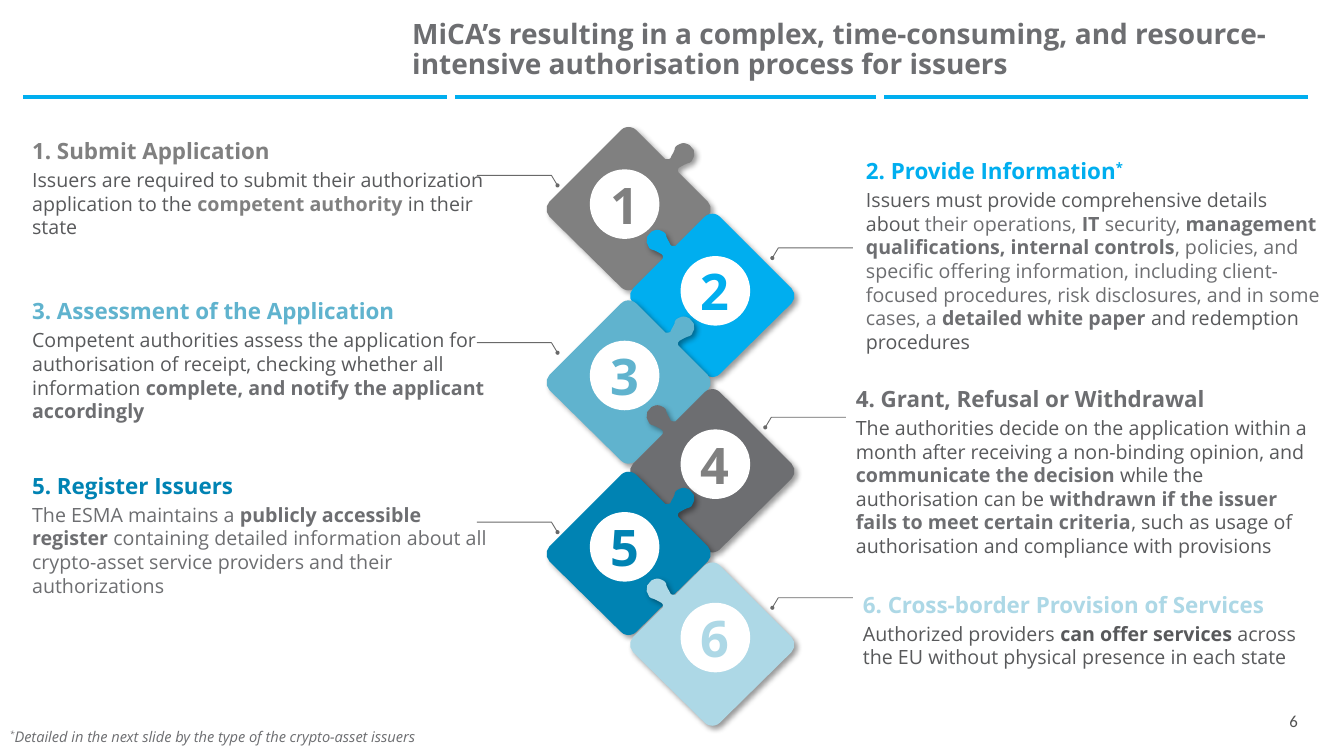
import dataclasses
import lxml.etree
import pptx
import pptx.dml.color
import pptx.enum.shapes
import pptx.enum.text
import pptx.oxml.ns
import pptx.util

Inches, Pt = pptx.util.Inches, pptx.util.Pt
Align, Anchor = pptx.enum.text.PP_ALIGN, pptx.enum.text.MSO_ANCHOR
qn = pptx.oxml.ns.qn


@dataclasses.dataclass(frozen=True)
class Theme:
    font: str = "Open Sans"
    plain: str = "Calibri"
    white: str = "FFFFFF"
    sky: str = "00AEEF"
    steel: str = "60B3CE"
    deep: str = "0083B3"
    pale: str = "ADD8E6"
    gray: str = "808080"
    slate: str = "6D6E71"
    ink: str = "58595B"
    rule: str = "696969"
    page: str = "525252"
    title: float = 20
    head: float = 16
    body: float = 14
    note: float = 10.5
    number: float = 12
    badge: float = 36


T = Theme()

# Right-hand puzzle piece, in inches from its corner: pairs are line ends,
# sets of six are Bezier curves. The left-hand piece is its mirror.
WIDE = 1.65
PIECE = [
    (0.83, 0), (0.8, 0, 0.77, 0.01, 0.75, 0.03), (0.46, 0.32),
    (0.46, 0.32, 0.45, 0.32, 0.44, 0.32), (0.43, 0.32, 0.42, 0.32, 0.41, 0.31),
    (0.4, 0.28, 0.38, 0.26, 0.37, 0.23), (0.37, 0.21, 0.36, 0.19, 0.34, 0.18),
    (0.32, 0.17, 0.3, 0.16, 0.28, 0.16), (0.26, 0.16, 0.24, 0.17, 0.22, 0.18),
    (0.16, 0.22, 0.16, 0.29, 0.2, 0.34), (0.21, 0.35, 0.23, 0.36, 0.24, 0.36),
    (0.27, 0.37, 0.3, 0.39, 0.32, 0.4), (0.34, 0.41, 0.34, 0.44, 0.33, 0.45),
    (0.04, 0.74), (0, 0.78, 0, 0.85, 0.04, 0.89), (0.75, 1.59),
    (0.77, 1.61, 0.8, 1.62, 0.83, 1.62), (0.85, 1.62, 0.88, 1.61, 0.9, 1.59),
    (1.61, 0.89), (1.65, 0.85, 1.65, 0.78, 1.61, 0.74), (0.9, 0.03),
    (0.88, 0.01, 0.85, 0, 0.83, 0),
]


def trace(parts, steps=3):
    """Turn lines and Bezier curves into a list of points."""
    points = [parts[0]]
    for part in parts[1:]:
        if len(part) == 2:
            points.append(part)
            continue
        nodes = [points[-1], part[:2], part[2:4], part[4:]]
        for step in range(1, steps + 1):
            t = step / steps
            blend = ((1 - t) ** 3, 3 * t * (1 - t) ** 2, 3 * t * t * (1 - t), t ** 3)
            points.append(tuple(sum(b * n[i] for b, n in zip(blend, nodes)) for i in (0, 1)))
    return points


def tint(color):
    return pptx.dml.color.RGBColor.from_string(color)


def add(parent, tag, **attrs):
    return lxml.etree.SubElement(parent, qn(tag), attrs)


class Deck:
    def __init__(self):
        self.show = pptx.Presentation()
        self.show.slide_width, self.show.slide_height = Inches(13.33), Inches(7.5)
        self.slide = self.show.slides.add_slide(self.show.slide_layouts[6])
        self.shapes = self.slide.shapes

    def paint(self, shape, color):
        shape.shadow.inherit = False
        shape.fill.solid()
        shape.fill.fore_color.rgb = tint(color)
        shape.line.fill.background()

    def style(self, run, size, color, bold=False, font=T.font, italic=False, base=False):
        run.font.size, run.font.name = Pt(size), font
        run.font.bold, run.font.italic = bold, italic
        run.font.color.rgb = tint(color)
        if base:
            run._r.get_or_add_rPr().set("baseline", "30000")

    def text(self, at, lines, anchor=Anchor.TOP, inset=0.1, after=(0,), align=Align.LEFT, space=None):
        """Add a box; each line is a list of (text, style) pairs."""
        frame = self.shapes.add_textbox(*map(Inches, at)).text_frame
        frame.word_wrap, frame.vertical_anchor = True, anchor
        frame.margin_left = frame.margin_right = Inches(0.1)
        frame.margin_top = frame.margin_bottom = Inches(inset)
        for i, (line, gap) in enumerate(zip(lines, after)):
            para = frame.add_paragraph() if i else frame.paragraphs[0]
            para.alignment, para.space_after, para.line_spacing = align, Pt(gap), space
            for words, look in line:
                run = para.add_run()
                run.text = words
                self.style(run, **look)

    def outline(self, points, closed):
        first, *rest = [(Inches(x), Inches(y)) for x, y in points]
        build = self.shapes.build_freeform(*first)
        build.add_line_segments(rest, close=closed)
        return build.convert_to_shape()

    def piece(self, left, top, color, flip):
        points = [(left + (WIDE - x if flip else x), top + y) for x, y in trace(PIECE)]
        shape = self.outline(points, True)
        self.paint(shape, color)
        glow = add(shape._element.spPr.find(qn("a:effectLst")), "a:outerShdw",
                   blurRad=str(Pt(4)), dist=str(Pt(3)), dir="2700000", algn="tl", rotWithShape="0")
        add(add(glow, "a:srgbClr", val="000000"), "a:alpha", val="40000")

    def oval(self, left, top, size, color):
        shape = self.shapes.add_shape(pptx.enum.shapes.MSO_SHAPE.OVAL,
                                      *map(Inches, (left, top, size, size)))
        self.paint(shape, color)
        return shape

    def badge(self, left, top, label, color):
        frame = self.oval(left, top, 0.69, T.white).text_frame
        frame.text, frame.word_wrap = label, False
        frame.margin_left = frame.margin_right = frame.margin_top = frame.margin_bottom = 0
        frame.vertical_anchor = Anchor.MIDDLE
        frame.paragraphs[0].alignment = Align.CENTER
        self.style(frame.paragraphs[0].runs[0], T.badge, color, True)

    def leader(self, x, y, side):
        """Draw a bent line from a dot; side is -1 for left, 1 for right."""
        line = self.outline([(x, y), (x + side * 0.06, y - 0.1), (x + side * 0.8, y - 0.1)], False)
        line.shadow.inherit = False
        line.fill.background()
        line.line.color.rgb, line.line.width = tint(T.rule), Pt(0.61)
        self.oval(x - 0.02, y - 0.02, 0.04, T.rule)

    def bars(self, left, top, width, height, count):
        table = self.shapes.add_table(1, count, *map(Inches, (left, top, width, height))).table
        for i, cell in enumerate(table.rows[0].cells):
            table.columns[i].width = Inches(width / count)
            cell.margin_left = cell.margin_right = cell.margin_top = cell.margin_bottom = 0
            cell.fill.solid()
            cell.fill.fore_color.rgb = tint(T.sky)
            add(cell.text_frame.paragraphs[0]._p, "a:endParaRPr", sz="100")
            props = cell._tc.get_or_add_tcPr()
            edges = [tag for tag, shown in (("a:lnL", i > 0), ("a:lnR", i < count - 1)) if shown]
            for spot, tag in enumerate(edges):
                edge = add(props, tag, w=str(Pt(6)))
                add(add(edge, "a:solidFill"), "a:srgbClr", val=T.white)
                props.insert(spot, edge)


def look(size, color, bold=False, **more):
    return dict(size=size, color=color, bold=bold, **more)


INK, INK_BOLD = look(T.body, T.ink), look(T.body, T.ink, True)
SLATE, SLATE_BOLD = look(T.body, T.slate), look(T.body, T.slate, True)
GRAY_BOLD = look(T.body, T.gray, True)

# Heading, colour, numeral colour, piece top, leader tip, text box, body
STEPS = [
    ("Submit Application", T.gray, T.gray, 1.26, (5.53, 1.84), (0.22, 1.26, 4.72, 1.26), [
        ("Issuers are required to submit their authorization application to the ", INK),
        ("competent authority ", GRAY_BOLD), ("in their state", INK)]),
    ("Provide Information", T.sky, T.sky, 2.12, (7.66, 2.56), (8.49, 1.46, 4.72, 2.01), [
        ("Issuers must provide comprehensive details about ", INK), ("their operations, ", SLATE),
        ("IT", SLATE_BOLD), (" security, ", SLATE),
        ("management qualifications, internal controls", SLATE_BOLD),
        (", policies, and specific offering information, including client-focused procedures, "
         "risk disclosures, and in some cases, a ", SLATE),
        ("detailed white paper ", SLATE_BOLD), ("and redemption procedures", INK)]),
    ("Assessment of the Application", T.steel, T.steel, 2.98, (5.53, 3.5), (0.22, 2.85, 4.72, 1.4), [
        ("Competent authorities assess the application for authorisation of receipt, "
         "checking whether all information ", INK),
        ("complete, and notify the applicant accordingly", SLATE_BOLD)]),
    ("Grant, Refusal or Withdrawal", T.slate, T.gray, 3.86, (7.59, 4.24), (8.39, 3.72, 4.72, 2.01), [
        ("The authorities decide on the application within a month after receiving "
         "a non-binding opinion, and ", INK),
        ("communicate the decision ", SLATE_BOLD), ("while the authorisation can be ", INK),
        ("withdrawn if the issuer fails to meet certain criteria", SLATE_BOLD),
        (", such as usage of authorisation and compliance with provisions", INK)]),
    ("Register Issuers", T.deep, T.deep, 4.68, (5.53, 5.28), (0.22, 4.58, 4.72, 1.18), [
        ("The ESMA maintains a ", SLATE), ("publicly accessible register ", SLATE_BOLD),
        ("containing detailed information about all crypto-asset service providers "
         "and their authorizations", SLATE)]),
    ("Cross-border Provision of Services", T.pale, T.pale, 5.58, (7.66, 6.03), (8.46, 5.76, 4.72, 1.12), [
        ("Authorized providers ", INK), ("can offer services ", INK_BOLD),
        ("across the EU without physical presence in each state", INK)]),
]


def main():
    deck = Deck()
    deck.bars(0.22, 0.94, 12.76, 0.05, 3)
    deck.text((3.99, 0, 8.98, 1), [[(
        "MiCA’s resulting in a complex, time-consuming, and resource-intensive "
        "authorisation process for issuers", look(T.title, T.slate, True))]],
        anchor=Anchor.MIDDLE, inset=0.05, space=0.9)
    deck.text((10.33, 6.95, 2.64, 0.4), [[("6", look(T.number, T.page, font=T.plain))]],
              anchor=Anchor.MIDDLE, inset=0.05, align=Align.RIGHT)
    for count, (name, color, digit, top, tip, box, body) in enumerate(STEPS, 1):
        odd = count % 2 == 1
        deck.piece(5.41 if odd else 6.24, top, color, odd)
        deck.badge(5.85 if odd else 6.75, top + (0.42 if count < 3 else 0.4), str(count), digit)
        deck.leader(*tip, -1 if odd else 1)
        head = [(f"{count}. {name}", look(T.head, color, True))]
        if count == 2:
            head.append(("*", look(T.head, color, True, base=True)))
        deck.text(box, [head, body], after=(3, 3))
    deck.text((0, 7.13, 6.9, 0.44), [[
        ("*", look(T.note, T.slate, italic=True, base=True)),
        ("Detailed in the next slide by the type of the crypto-asset issuers",
         look(T.note, T.slate, italic=True))]], after=(3,))
    deck.show.save("out.pptx")


if __name__ == "__main__":
    main()
